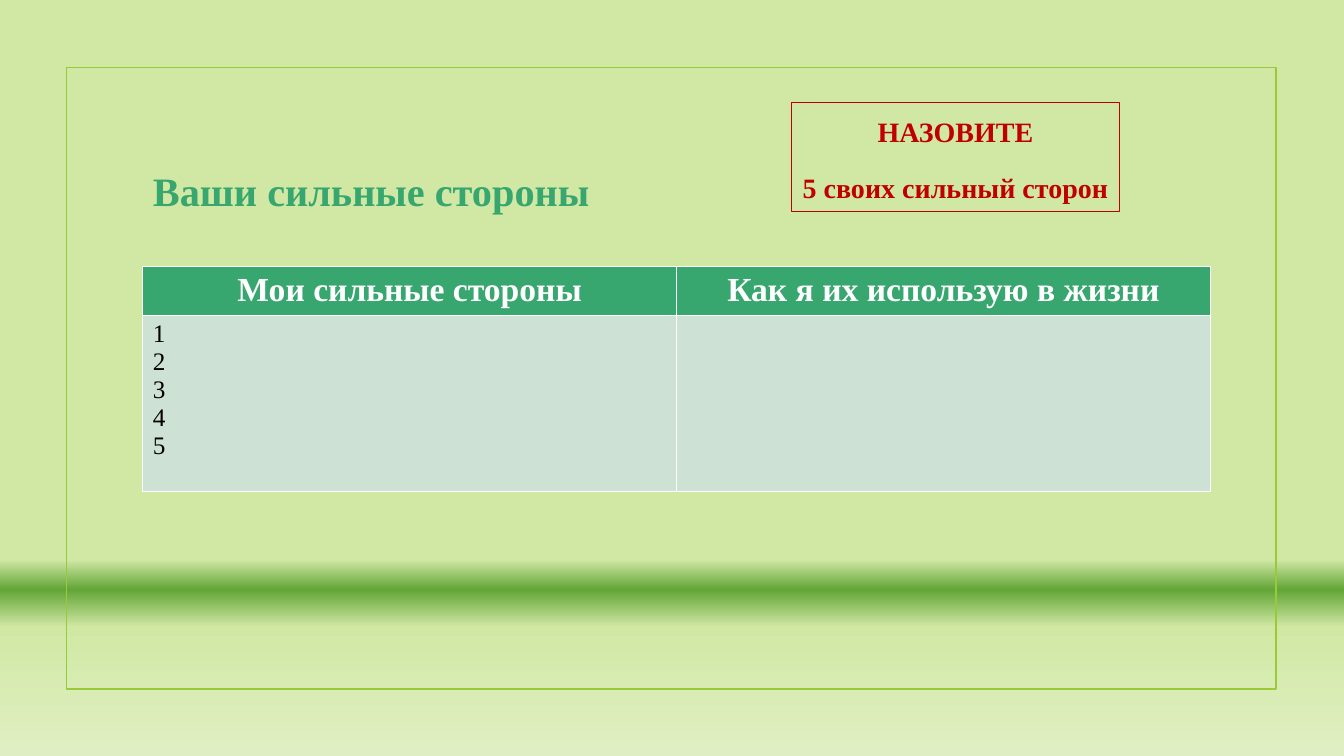
"""Build the slide about personal strengths with its two-column table."""
from lxml.etree import SubElement
from pptx import Presentation
from pptx.dml.color import RGBColor
from pptx.enum.shapes import MSO_SHAPE as Shape
from pptx.enum.text import MSO_ANCHOR as Anchor, PP_ALIGN as Align
from pptx.oxml.ns import qn
from pptx.util import Cm, Pt

GREEN, RED, WHITE = "37A76F", "C00000", "FFFFFF"
BACKGROUND_STOPS = [(74, "D1E8A5"), (78, "63A537"), (83, "D1E8A5"), (100, "E0EFC3")]


def color(value):
    """Turn a hex string into a colour."""
    return RGBColor.from_string(value)


def write(text_frame, text, size, hue, bold=True, **paragraph_format):
    """Fill a text frame with one paragraph for each line of the text."""
    text_frame.text = text
    font_format = {"name": "Times New Roman", "size": Pt(size), "bold": bold}
    for paragraph in text_frame.paragraphs:
        for name, value in font_format.items():
            setattr(paragraph.font, name, value)
        paragraph.font.color.rgb = color(hue)
        for name, value in paragraph_format.items():
            setattr(paragraph, name, value)


presentation = Presentation()
presentation.slide_width, presentation.slide_height = Cm(33.87), Cm(19.05)
slide = presentation.slides.add_slide(presentation.slide_layouts[5])

background = slide.background.fill
background.gradient()
background.gradient_angle = 270
stop_list = slide.element.find(".//" + qn("a:gsLst"))
stop_list.clear()
for position, value in BACKGROUND_STOPS:
    stop = SubElement(stop_list, qn("a:gs"), pos=str(position * 1000))
    SubElement(stop, qn("a:srgbClr"), val=value)

outlines = [
    (1.68, 1.7, 30.48, 15.67, "99CB38", 1.25),
    (19.94, 2.58, 8.28, 2.75, RED, 0.75),
]
for left, top, width, height, hue, weight in outlines:
    shape = slide.shapes.add_shape(
        Shape.RECTANGLE, Cm(left), Cm(top), Cm(width), Cm(height))
    shape.shadow.inherit = False
    shape.fill.background()
    shape.line.color.rgb = color(hue)
    shape.line.width = Pt(weight)

callout = shape.text_frame
callout.vertical_anchor = Anchor.TOP
callout.word_wrap = True
write(callout, "НАЗОВИТЕ\n5 своих сильный сторон", 20, RED,
      alignment=Align.CENTER, line_spacing=1.2, space_after=Pt(6))
callout.paragraphs[1].space_before = Pt(5.5)

title = slide.shapes.title
title_place = {"left": 3.6, "top": 3.95, "width": 12.48, "height": 1.58}
for name, value in title_place.items():
    setattr(title, name, Cm(value))
title.text_frame.vertical_anchor = Anchor.BOTTOM
write(title.text_frame, "Ваши сильные стороны", 28.8, GREEN, alignment=Align.LEFT)

table = slide.shapes.add_table(
    2, 2, Cm(3.6), Cm(6.72), Cm(26.9), Cm(5.67)).table
for row, height in zip(table.rows, (1.22, 4.45)):
    row.height = Cm(height)
headings = ["Мои сильные стороны", "Как я их использую в жизни"]
for column, heading in enumerate(headings):
    header, body = table.cell(0, column), table.cell(1, column)
    for cell, hue in ((header, GREEN), (body, "CEE1D5")):
        cell.fill.solid()
        cell.fill.fore_color.rgb = color(hue)
    write(header.text_frame, heading, 24, WHITE, alignment=Align.CENTER)
write(table.cell(1, 0).text_frame, "1\n2\n3\n4\n5", 18, "000000", bold=False)

presentation.save("out.pptx")
